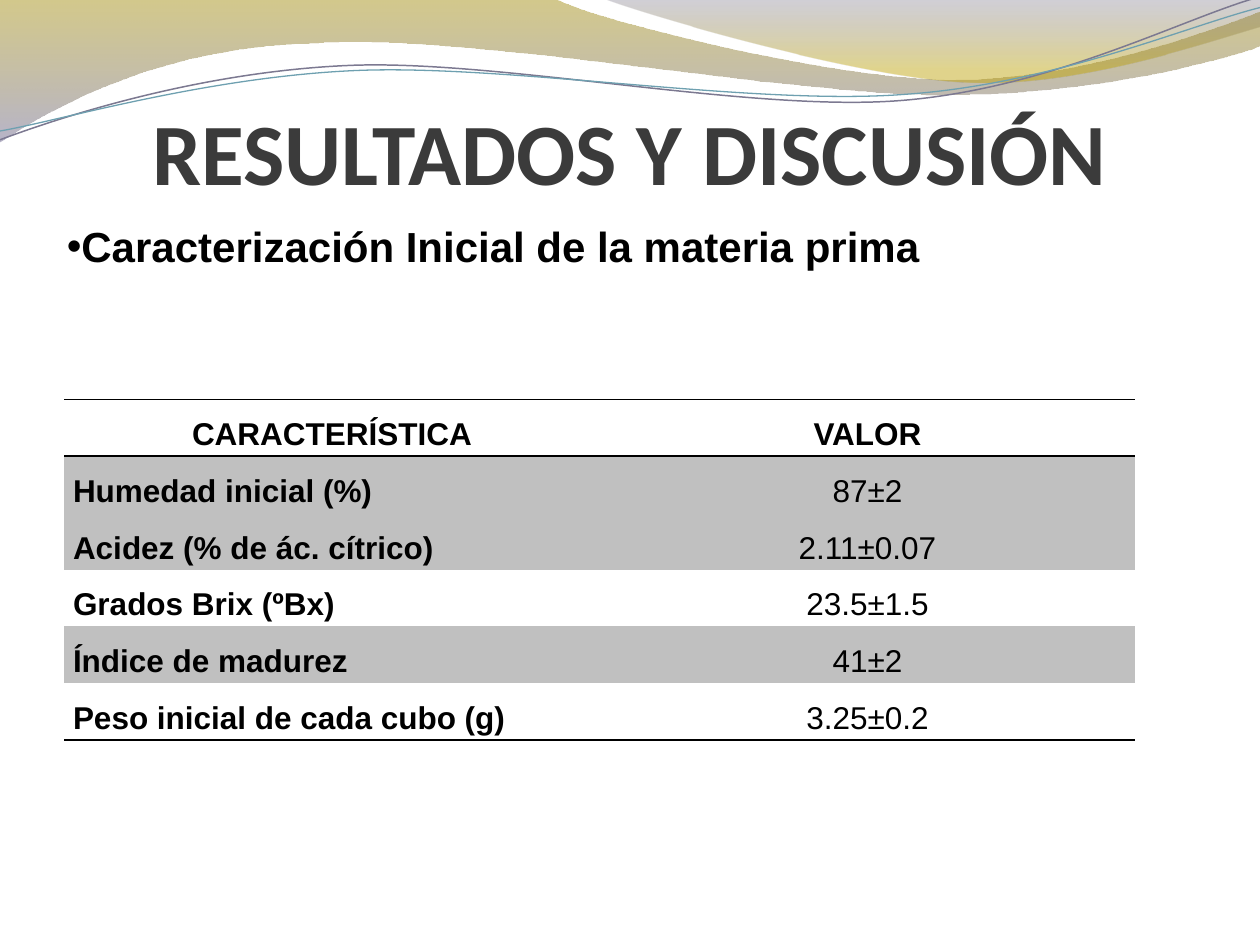
from pptx import Presentation
from pptx.dml.color import RGBColor
from pptx.enum.text import MSO_ANCHOR as Anchor, MSO_AUTO_SIZE as AutoSize, PP_ALIGN as Align
from pptx.oxml import parse_xml
from pptx.oxml.ns import nsdecls, qn
from pptx.util import Inches, Pt

NO_GRID_STYLE = "{2D5ABB26-0587-4C30-8999-92F81FD0307C}"
EDGES = ("lnL", "lnR", "lnT", "lnB")
ROWS = [
    ("CARACTERÍSTICA", "VALOR"),
    ("Humedad inicial (%)", "87±2"),
    ("Acidez (% de ác. cítrico)", "2.11±0.07"),
    ("Grados Brix (ºBx)", "23.5±1.5"),
    ("Índice de madurez", "41±2"),
    ("Peso inicial de cada cubo (g)", "3.25±0.2"),
]
SHADED_ROWS = {1, 2, 4}
RULES = {0: ("lnT", "lnB"), 1: ("lnT",), 5: ("lnB",)}
LEFT_BAND = [
    [(0, 0)], [(4.4, -0.01)],
    [(4.76, 0.17), (6.64, 0.63), (7.58, 0.63)], [(8.53, 0.63), (9.58, 0.26), (10, 0.09)],
    [(10.01, 0.36)],
    [(9.83, 0.44), (8.7, 0.76), (7.46, 0.75)], [(6.22, 0.75), (3.82, 0.28), (2.57, 0.34)],
    [(1.29, 0.36), (0.46, 0.83), (-0.01, 1.13)], [(0, 0)],
]
RIGHT_BAND = [
    [(4.79, -0.01)],
    [(5.09, 0.11), (6.82, 0.62), (7.69, 0.65)], [(8.56, 0.69), (9.61, 0.32), (10, 0.21)],
    [(10, 0)], [(4.79, -0.01)],
]
PURPLE_WAVE = [
    [(0, 1.11)],
    [(0.48, 0.93), (1.58, 0.57), (2.77, 0.52)], [(3.95, 0.47), (5.93, 0.89), (7.13, 0.8)],
    [(8.33, 0.71), (9.38, 0.15), (9.98, -0.02)],
]
BLUE_WAVE = [
    [(0, 1.04)],
    [(0.47, 0.96), (1.64, 0.61), (2.83, 0.56)], [(4.03, 0.51), (5.97, 0.84), (7.17, 0.75)],
    [(8.36, 0.67), (9.41, 0.21), (10, 0.06)],
]


def color(value):
    """Turn a hex string into a colour."""
    return RGBColor.from_string(value)


def apply(target, values):
    """Set attributes from a dict of format values."""
    for name, value in values.items():
        setattr(target, name, value)


def place(shape, left, top, width, height):
    """Move and size a shape, in inches."""
    apply(shape, {"left": Inches(left), "top": Inches(top),
                  "width": Inches(width), "height": Inches(height)})


def write(para, text, size, ink, font="Arial", bold=True, **layout):
    """Put one formatted span of text in a paragraph."""
    apply(para, layout)
    span = para.add_run()
    span.text = text
    apply(span.font, {"name": font, "size": Pt(size), "bold": bold})
    span.font.color.rgb = color(ink)


def bend(shape, segments):
    """Join the line steps of each three-point segment into one cubic curve."""
    steps = iter(list(shape.element.iter(qn("a:lnTo"))))
    for segment in segments[1:]:
        group = [next(steps) for _ in segment]
        if len(group) == 3:
            curve = parse_xml(f'<a:cubicBezTo {nsdecls("a")}/>')
            group[0].addprevious(curve)
            for step in group:
                curve.append(step[0])
                step.getparent().remove(step)


def add_outline(page, segments, close):
    """Add a curved outline behind the placeholders."""
    start, *others = [(Inches(x), Inches(y)) for segment in segments for x, y in segment]
    builder = page.shapes.build_freeform(*start)
    builder.add_line_segments(others, close=close)
    shape = builder.convert_to_shape()
    bend(shape, segments)
    shape.shadow.inherit = False
    page.shapes.title.element.addprevious(shape.element)
    return shape


def add_band(page, segments, stops):
    """Add a band with a translucent vertical gradient."""
    band = add_outline(page, segments, True)
    band.line.fill.background()
    band.fill.gradient()
    band.fill.gradient_angle = 270
    for stop, (position, tint, _) in zip(band.fill.gradient_stops, stops):
        stop.position = position
        stop.color.rgb = color(tint)
    for node, (_, _, alpha) in zip(band.element.iter(qn("a:srgbClr")), stops):
        node.append(parse_xml(f'<a:alpha {nsdecls("a")} val="{alpha * 1000}"/>'))


def add_wave(page, segments, tint, width):
    """Add a thin curved line."""
    wave = add_outline(page, segments, False)
    wave.fill.background()
    wave.line.color.rgb = color(tint)
    wave.line.width = Pt(width)


def fill_title(title):
    """Write the title."""
    place(title, 0.5, 0.36, 9, 1.25)
    apply(title.text_frame, {
        "vertical_anchor": Anchor.BOTTOM, "auto_size": AutoSize.NONE, "margin_left": 0,
        "margin_right": 0, "margin_top": Inches(0.05), "margin_bottom": 0})
    write(title.text_frame.paragraphs[0], "RESULTADOS Y DISCUSIÓN", 50, "3B3B3B",
          "Calibri", alignment=Align.CENTER)


def fill_body(body):
    """Write the bulleted heading."""
    place(body, 0.43, 1.7, 7.03, 0.5)
    apply(body.text_frame, {"vertical_anchor": Anchor.MIDDLE, "word_wrap": False,
                            "auto_size": AutoSize.SHAPE_TO_FIT_TEXT})
    para = body.text_frame.paragraphs[0]
    write(para, "Caracterización Inicial de la materia prima", 24, "000000",
          alignment=Align.LEFT, space_before=Pt(0))
    props = para._p.get_or_add_pPr()
    props.set("marL", "0")
    props.set("indent", "0")
    props.append(parse_xml(f'<a:buFont {nsdecls("a")} typeface="Arial"/>'))
    props.append(parse_xml(f'<a:buChar {nsdecls("a")} char="•"/>'))


def add_rules(cell, ruled):
    """Draw black rules on the given edges of a cell and none on the others."""
    props = cell._tc.get_or_add_tcPr()
    black = '<a:solidFill><a:srgbClr val="000000"/></a:solidFill>'
    for index, edge in enumerate(EDGES):
        ink = black if edge in ruled else "<a:noFill/>"
        props.insert(index, parse_xml(
            f'<a:{edge} {nsdecls("a")} w="12700">{ink}</a:{edge}>'))


def add_results(page):
    """Add the table, with rows that grow to fit their text."""
    frame = page.shapes.add_table(len(ROWS), 2, Inches(0.51), Inches(3.17), Inches(8.5), 0)
    frame.height = Inches(2.7)
    table = frame.table
    apply(table, {"first_row": False, "horz_banding": False})
    next(frame.element.iter(qn("a:tableStyleId"))).text = NO_GRID_STYLE
    for row, texts in enumerate(ROWS):
        for column, text in enumerate(texts):
            cell = table.cell(row, column)
            apply(cell, {"margin_left": Inches(0.07), "margin_right": Inches(0.07),
                         "margin_top": 0, "margin_bottom": 0})
            label = row > 0 and column == 0
            write(cell.text_frame.paragraphs[0], text, 18, "000000",
                  bold=row == 0 or label, line_spacing=1.5,
                  alignment=Align.JUSTIFY if label else Align.CENTER)
            if row in SHADED_ROWS:
                cell.fill.solid()
                cell.fill.fore_color.rgb = color("C0C0C0")
            else:
                cell.fill.background()
            add_rules(cell, RULES.get(row, ()))


def main():
    """Build the slide and save the deck."""
    deck = Presentation()
    apply(deck, {"slide_width": Inches(10), "slide_height": Inches(7.5)})
    page = deck.slides.add_slide(deck.slide_layouts[1])
    add_band(page, LEFT_BAND, [(0, "9E8700", 45), (1, "7B769C", 55)])
    add_band(page, RIGHT_BAND, [(0, "66627C", 30), (0.8, "BDA100", 45)])
    add_wave(page, PURPLE_WAVE, "7C7991", 0.85)
    add_wave(page, BLUE_WAVE, "6EA0B0", 0.75)
    fill_title(page.shapes.title)
    add_results(page)
    fill_body(page.placeholders[1])
    deck.save("out.pptx")


if __name__ == "__main__":
    main()
